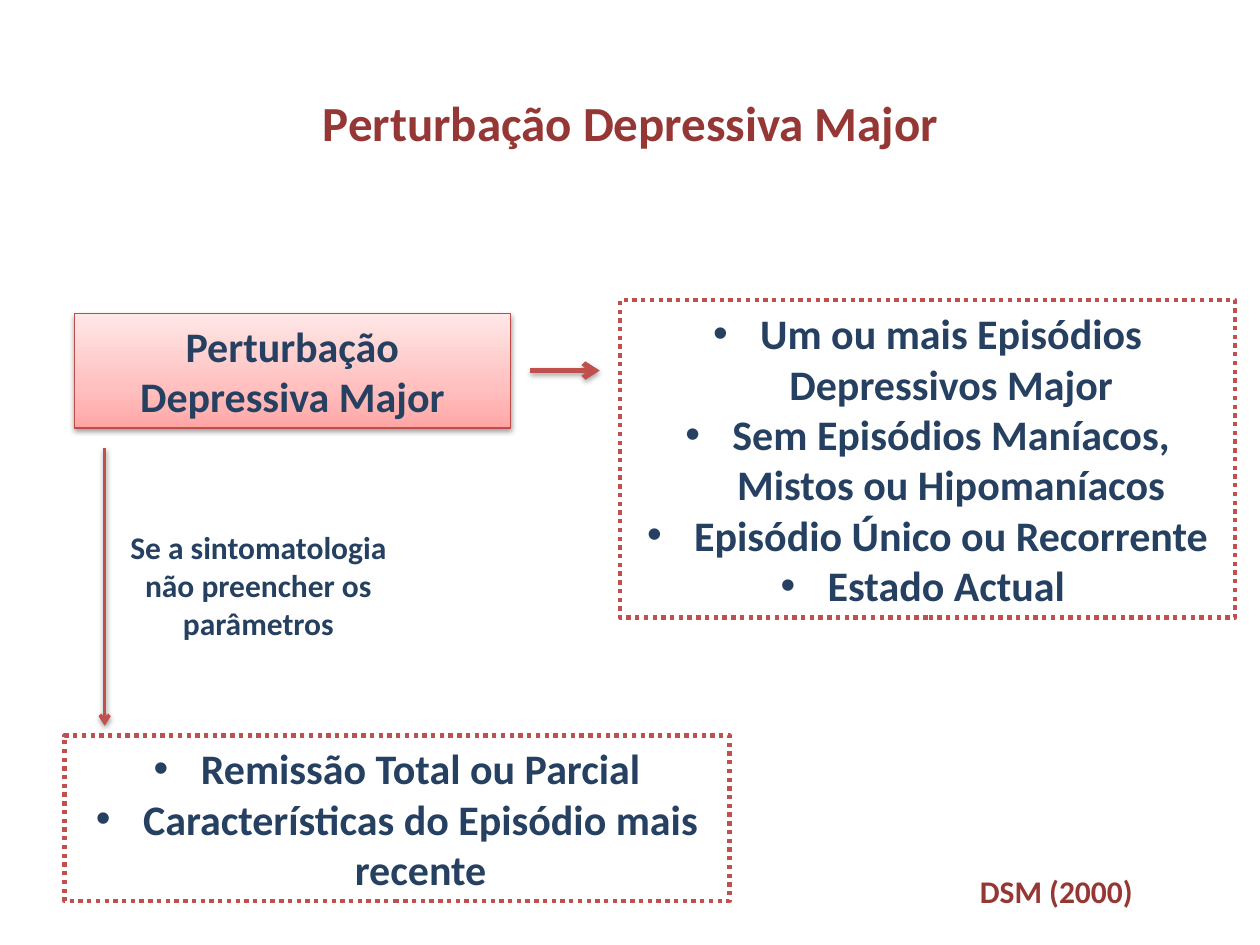
from lxml.etree import SubElement
from pptx import Presentation
from pptx.dml.color import RGBColor
from pptx.enum.dml import MSO_LINE_DASH_STYLE as Dash
from pptx.enum.shapes import MSO_CONNECTOR as Conn, MSO_SHAPE as Shape
from pptx.enum.text import MSO_ANCHOR as Anchor, PP_ALIGN as Align
from pptx.oxml import parse_xml
from pptx.oxml.ns import nsdecls, qn
from pptx.util import Cm, Pt

FONT = "Calibri"
WINE, NAVY, RED = "953735", "254061", "C0504D"


def rgb(value):
    return RGBColor.from_string(value)


def write(sp, *lines, size=24, color=NAVY, bullets=False, anchor=Anchor.MIDDLE):
    tf = sp.text_frame
    tf.word_wrap = True
    tf.vertical_anchor = anchor
    for i, line in enumerate(lines):
        p = tf.add_paragraph() if i else tf.paragraphs[0]
        p.alignment = Align.CENTER
        r = p.add_run()
        r.text = line
        r.font.name, r.font.size, r.font.bold = FONT, Pt(size), True
        r.font.color.rgb = rgb(color)
        if bullets:
            pPr = p._p.get_or_add_pPr()
            pPr.set("marL", str(Cm(0.95)))
            pPr.set("indent", str(-Cm(0.95)))
            SubElement(pPr, qn("a:buFont"), typeface="Arial")
            SubElement(pPr, qn("a:buChar"), char="•")


def set_effects(sp, alpha=38):
    """Replace the theme shadow by a soft one that falls straight down."""
    sp._element.spPr.append(parse_xml(
        f'<a:effectLst {nsdecls("a")}>'
        f'<a:outerShdw blurRad="{Pt(3.1)}" dist="{Pt(1.6)}" dir="5400000" rotWithShape="0">'
        f'<a:srgbClr val="000000"><a:alpha val="{alpha * 1000}"/></a:srgbClr>'
        '</a:outerShdw></a:effectLst>'))


def add_box(slide, x, y, w, h, line, width):
    sp = slide.shapes.add_shape(Shape.RECTANGLE, Cm(x), Cm(y), Cm(w), Cm(h))
    sp.line.color.rgb = rgb(line)
    sp.line.width = Pt(width)
    return sp


def add_title(slide, x, y, w, h, text):
    sp = slide.shapes.title
    sp.left, sp.top, sp.width, sp.height = Cm(x), Cm(y), Cm(w), Cm(h)
    write(sp, text, size=28, color=WINE, anchor=Anchor.TOP)


def add_disorder(slide, x, y, w, h, text):
    sp = add_box(slide, x, y, w, h, "BF4C48", 0.75)
    stops = "".join(
        f'<a:gs pos="{pos * 1000}"><a:srgbClr val="{color}"/></a:gs>'
        for pos, color in ((0, "FFA6A5"), (35, "FFC0BF"), (100, "FFE7E7")))
    sp._element.spPr.insert(2, parse_xml(
        f'<a:gradFill {nsdecls("a")} rotWithShape="1"><a:gsLst>{stops}</a:gsLst>'
        '<a:lin ang="16200000" scaled="0"/></a:gradFill>'))
    set_effects(sp)
    write(sp, text)


def add_criteria(slide, x, y, w, h, *items):
    sp = add_box(slide, x, y, w, h, RED, 2.5)
    sp.fill.background()
    sp.line.dash_style = Dash.ROUND_DOT
    sp.shadow.inherit = False
    write(sp, *items, bullets=True)


def add_note(slide, x, y, w, h, text, color=NAVY):
    sp = slide.shapes.add_textbox(Cm(x), Cm(y), Cm(w), Cm(h))
    write(sp, text, size=18, color=color, anchor=Anchor.TOP)


def add_arrow(slide, x, y, dx, dy, width, alpha):
    sp = slide.shapes.add_connector(
        Conn.STRAIGHT, Cm(x), Cm(y), Cm(x + dx), Cm(y + dy))
    sp.line.color.rgb = rgb(RED)
    sp.line.width = Pt(width)
    SubElement(sp.line._get_or_add_ln(), qn("a:tailEnd"), type="arrow")
    set_effects(sp, alpha)


def add_condition(slide, x, y, w, h, text):
    """Downward arrow on the left edge, with the condition beside it."""
    add_arrow(slide, x, y, 0, h, 2, 38)
    add_note(slide, x, y + 1.48, w, 2.57, text)


def main():
    prs = Presentation()
    prs.slide_width, prs.slide_height = Cm(25.4), Cm(19.05)
    slide = prs.slides.add_slide(prs.slide_layouts[5])

    add_title(slide, 3.91, 1.73, 17.6, 1.45, "Perturbação Depressiva Major")
    add_disorder(slide, 1.5, 6.32, 8.79, 2.31, "Perturbação Depressiva Major")
    add_criteria(slide, 12.5, 6.05, 12.4, 6.4,
                 "Um ou mais Episódios Depressivos Major",
                 "Sem Episódios Maníacos, Mistos ou Hipomaníacos",
                 "Episódio Único ou Recorrente",
                 "Estado Actual ")
    add_criteria(slide, 1.3, 14.83, 13.41, 3.33,
                 "Remissão Total ou Parcial",
                 "Características do Episódio mais recente")
    add_condition(slide, 2.11, 9.04, 6.2, 5.59,
                  "Se a sintomatologia não preencher os parâmetros")
    add_arrow(slide, 10.69, 7.47, 1.4, 0, 3, 35)
    add_note(slide, 19.3, 17.45, 3.99, 1.02, "DSM (2000)", color=WINE)
    prs.save("out.pptx")


if __name__ == "__main__":
    main()
